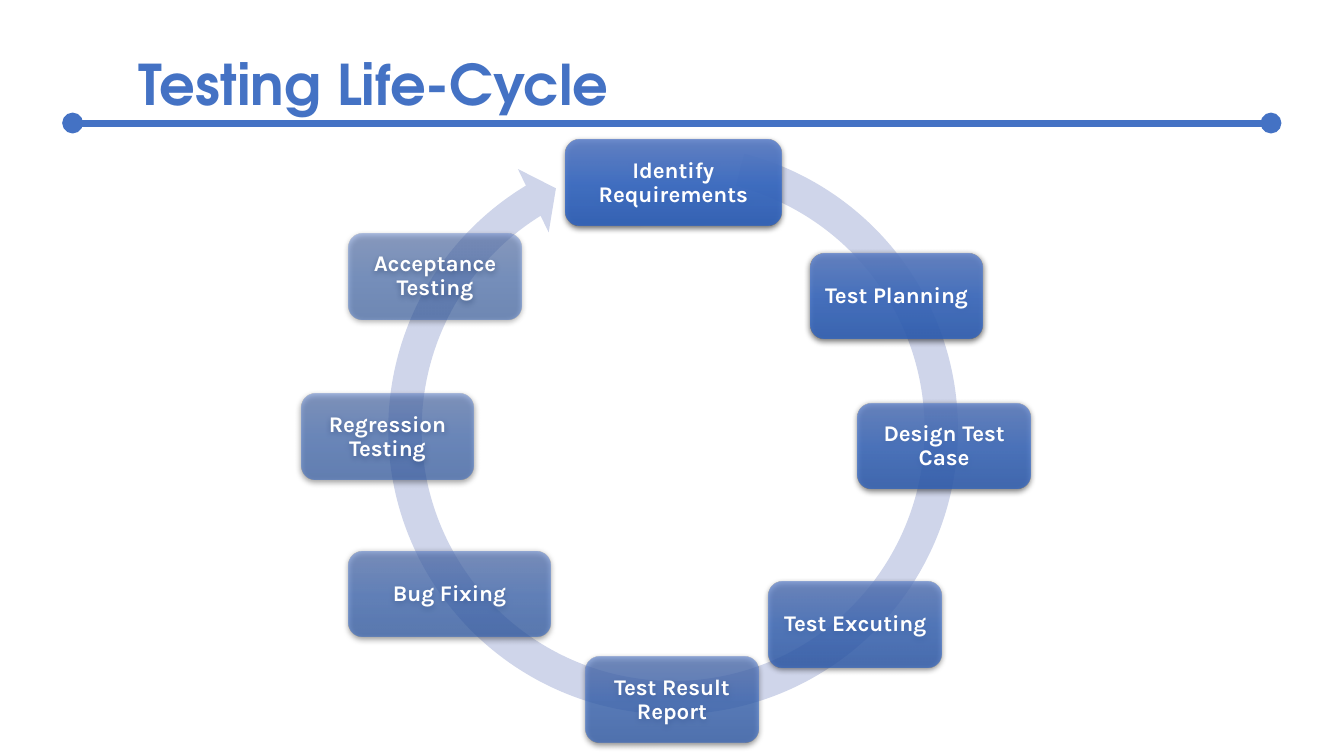
import dataclasses

import lxml.etree
import pptx
import pptx.dml.color
import pptx.enum.shapes
import pptx.enum.text
import pptx.oxml
import pptx.oxml.ns
import pptx.util

Cm = pptx.util.Cm
Pt = pptx.util.Pt
SHAPE = pptx.enum.shapes.MSO_SHAPE
ALIGN = pptx.enum.text.PP_ALIGN
ANCHOR = pptx.enum.text.MSO_ANCHOR
qn = pptx.oxml.ns.qn
NS = 'xmlns:a="http://schemas.openxmlformats.org/drawingml/2006/main"'


@dataclasses.dataclass(frozen=True)
class Theme:
    accent: str = "4472C4"
    ring: str = "CFD5EA"
    step_text: str = "FFFFFF"
    shadow: str = "000000"
    step_stops: tuple = ((0, "6183CB"), (50, "3E70CA"), (100, "3062BB"))
    title_font: str = "TeX Gyre Adventor"
    step_font: str = "Karla"
    title_size: int = 40
    step_size: int = 16
    rule_width: int = 5


THEME = Theme()
STEP_W, WIDE_STEP_W, FIRST_STEP_W, STEP_H = 4.35, 5.08, 5.44, 2.16
FIRST_OPACITY, LAST_OPACITY = 90, 50
STEPS = [
    ("Identify Requirements", 14.25, 3.53, FIRST_STEP_W),
    ("Test Planning", 20.42, 6.38, STEP_W),
    ("Design Test Case", 21.62, 10.16, STEP_W),
    ("Test Excuting", 19.38, 14.66, STEP_W),
    ("Test Result Report", 14.76, 16.56, STEP_W),
    ("Bug Fixing", 8.79, 13.89, WIDE_STEP_W),
    ("Regression Testing", 7.59, 9.93, STEP_W),
    ("Acceptance Testing", 8.79, 5.89, STEP_W),
]


def rgb(color):
    return pptx.dml.color.RGBColor.from_string(color)


def apply(target, values):
    for name, value in values.items():
        setattr(target, name, value)


def write(tf, text, font, size, color, frame, paragraph):
    apply(tf, frame)
    p = tf.paragraphs[0]
    apply(p, paragraph)
    r = p.add_run()
    r.text = text
    apply(r.font, {"name": font, "size": Pt(size), "bold": True})
    r.font.color.rgb = rgb(color)


def add_title(s, text):
    sp = s.shapes.title
    apply(sp, {"left": Cm(3.23), "top": Cm(1.12),
               "width": Cm(12.6), "height": Cm(1.96)})
    write(sp.text_frame, text, THEME.title_font, THEME.title_size, THEME.accent,
          {"word_wrap": False, "vertical_anchor": ANCHOR.TOP,
           "auto_size": pptx.enum.text.MSO_AUTO_SIZE.SHAPE_TO_FIT_TEXT},
          {"alignment": ALIGN.LEFT})


def add_rule(s, left, right, y):
    line = s.shapes.add_connector(
        pptx.enum.shapes.MSO_CONNECTOR.STRAIGHT, Cm(left), Cm(y), Cm(right), Cm(y))
    line.line.color.rgb = rgb(THEME.accent)
    line.line.width = Pt(THEME.rule_width)
    ln = line.line._get_or_add_ln()
    for end in ("a:headEnd", "a:tailEnd"):
        lxml.etree.SubElement(ln, qn(end), type="oval")
    lxml.etree.SubElement(line._element.spPr, qn("a:effectLst"))


def add_ring(s, left, top, size):
    sp = s.shapes.add_shape(SHAPE.CIRCULAR_ARROW, Cm(left), Cm(top), Cm(size), Cm(size))
    for i, value in enumerate((0.055, 3.307, 143.142, 170.663, 0.058)):
        sp.adjustments[i] = value
    sp.shadow.inherit = False
    sp.fill.solid()
    sp.fill.fore_color.rgb = rgb(THEME.ring)
    sp.line.fill.background()


def color_xml(color, opacity):
    return (f'<a:srgbClr val="{color}">'
            f'<a:alpha val="{round(opacity * 1000)}"/></a:srgbClr>')


def style_step(sp, opacity):
    sp.line.fill.background()
    stops = "".join(f'<a:gs pos="{pos * 1000}">{color_xml(color, opacity)}</a:gs>'
                    for pos, color in THEME.step_stops)
    gradient = pptx.oxml.parse_xml(
        f'<a:gradFill {NS} rotWithShape="1"><a:gsLst>{stops}</a:gsLst>'
        '<a:lin ang="5400000" scaled="0"/></a:gradFill>')
    shadow = pptx.oxml.parse_xml(
        f'<a:effectLst {NS}><a:outerShdw blurRad="{Pt(4.5)}" dist="{Pt(1.5)}" '
        'dir="5400000" algn="ctr" rotWithShape="0">'
        f'{color_xml(THEME.shadow, 63)}</a:outerShdw></a:effectLst>')
    spPr = sp._element.spPr
    spPr.find(qn("a:prstGeom")).addnext(gradient)
    spPr.find(qn("a:ln")).addnext(shadow)


def add_step(s, text, left, top, width, opacity):
    sp = s.shapes.add_shape(SHAPE.ROUNDED_RECTANGLE,
                            Cm(left), Cm(top), Cm(width), Cm(STEP_H))
    style_step(sp, opacity)
    margins = {f"margin_{side}": Cm(0.18) for side in ("left", "right", "top", "bottom")}
    write(sp.text_frame, text, THEME.step_font, THEME.step_size, THEME.step_text,
          {"word_wrap": True, "vertical_anchor": ANCHOR.MIDDLE, **margins},
          {"alignment": ALIGN.CENTER, "line_spacing": 0.9})


def main():
    prs = pptx.Presentation()
    apply(prs, {"slide_width": Cm(33.87), "slide_height": Cm(19.05)})
    s = prs.slides.add_slide(prs.slide_layouts.get_by_name("Title Only"))
    add_rule(s, 1.83, 32.03, 3.1)
    add_title(s, "Testing Life-Cycle")
    add_ring(s, 9.32, 3.18, 15.29)
    fade = (FIRST_OPACITY - LAST_OPACITY) / (len(STEPS) - 1)
    for i, step in enumerate(STEPS):
        add_step(s, *step, FIRST_OPACITY - i * fade)
    prs.save("out.pptx")


if __name__ == "__main__":
    main()
